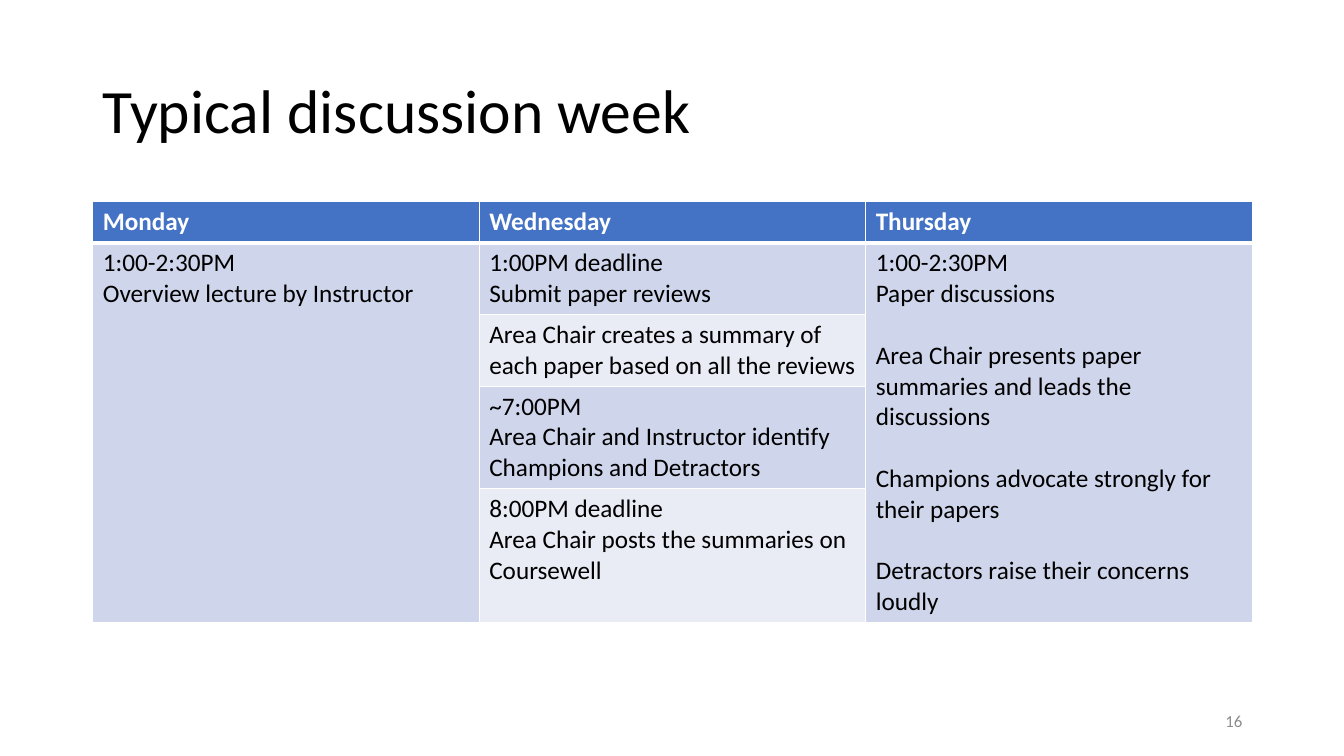
from pptx import Presentation
from pptx.dml.color import RGBColor
from pptx.enum.text import MSO_ANCHOR as Anchor, PP_ALIGN as Align
from pptx.oxml import parse_xml
from pptx.oxml.ns import nsdecls
from pptx.util import Inches, Pt

HEADINGS = ["Monday", "Wednesday", "Thursday"]
MONDAY = ["1:00-2:30PM", "Overview lecture by Instructor"]
WEDNESDAY = [
    ["1:00PM deadline", "Submit paper reviews"],
    ["Area Chair creates a summary of each paper based on all the reviews"],
    ["~7:00PM", "Area Chair and Instructor identify Champions and Detractors"],
    ["8:00PM deadline", "Area Chair posts the summaries on Coursewell"],
]
THURSDAY = [
    "1:00-2:30PM",
    "Paper discussions",
    "Area Chair presents paper summaries and leads the discussions",
    "Champions advocate strongly for their papers",
    "Detractors raise their concerns loudly",
]
ROW_HEIGHTS = [0.41, 0.71, 0.71, 1.01, 1.32]


def color(value):
    return RGBColor.from_string(value)


class WeekSlide:
    font = "Calibri"
    black, white, gray = "000000", "FFFFFF", "8C8C8C"
    header = "4472C4"
    bands = ["CFD5EA", "E9EBF5"]
    left, width = 0.92, 11.5

    def __init__(self, deck):
        self.slide = deck.slides.add_slide(deck.slide_layouts[5])

    def style_text(self, frame, size, ink, bold=False, align=Align.LEFT):
        for paragraph in frame.paragraphs:
            paragraph.alignment = align
            for run in paragraph.runs:
                run.font.name = self.font
                run.font.size = Pt(size)
                run.font.bold = bold
                run.font.color.rgb = color(ink)

    def title(self, text):
        heading = self.slide.shapes.title
        heading.left, heading.top = Inches(self.left), Inches(0.4)
        heading.width, heading.height = Inches(self.width), Inches(1.45)
        frame = heading.text_frame
        frame.text = text
        frame.vertical_anchor = Anchor.MIDDLE
        frame.paragraphs[0].line_spacing = 0.9
        self.style_text(frame, 44, self.black)

    def page_number(self, text):
        box = self.slide.shapes.add_textbox(
            Inches(9.42), Inches(6.95), Inches(3), Inches(0.4))
        frame = box.text_frame
        frame.word_wrap = True
        frame.vertical_anchor = Anchor.MIDDLE
        frame.text = text
        self.style_text(frame, 12, self.gray, align=Align.RIGHT)

    def table(self, top, columns, heights):
        schedule = self.slide.shapes.add_table(
            len(heights), columns, Inches(self.left), Inches(top),
            Inches(self.width), Inches(sum(heights))).table
        for row, height in zip(schedule.rows, heights):
            row.height = Inches(height)
        for index, row in enumerate(schedule.rows):
            for cell in row.cells:
                self.borders(cell, top=3 if index == 1 else 1,
                             bottom=3 if index == 0 else 1)
                cell.fill.solid()
                fill = self.bands[(index - 1) % 2] if index else self.header
                cell.fill.fore_color.rgb = color(fill)
        return schedule

    def borders(self, cell, top, bottom):
        properties = cell._tc.get_or_add_tcPr()
        for side, points in zip("LRTB", (1, 1, top, bottom)):
            properties.append(parse_xml(
                f'<a:ln{side} {nsdecls("a")} w="{Pt(points)}"><a:solidFill>'
                f'<a:srgbClr val="{self.white}"/></a:solidFill></a:ln{side}>'))

    def cell_text(self, cell, lines, ink=black, bold=False, spaced_from=None):
        frame = cell.text_frame
        frame.text = "\n".join(lines)
        self.style_text(frame, 18, ink, bold)
        if spaced_from is not None:
            for paragraph in frame.paragraphs[spaced_from:]:
                paragraph.space_before = Pt(22)


def main():
    deck = Presentation()
    deck.slide_width, deck.slide_height = Inches(13.33), Inches(7.5)
    week = WeekSlide(deck)
    week.title("Typical discussion week")

    # Schedule: one column per day
    schedule = week.table(2, len(HEADINGS), ROW_HEIGHTS)
    for column, day in enumerate(HEADINGS):
        week.cell_text(schedule.cell(0, column), [day], week.white, bold=True)

    # Monday and Thursday each fill the whole column
    last_row = len(WEDNESDAY)
    for column in (0, 2):
        schedule.cell(1, column).merge(schedule.cell(last_row, column))
    week.cell_text(schedule.cell(1, 0), MONDAY)
    week.cell_text(schedule.cell(1, 2), THURSDAY, spaced_from=2)

    # Wednesday has one row per step
    for row, step in enumerate(WEDNESDAY, start=1):
        week.cell_text(schedule.cell(row, 1), step)

    week.page_number("16")
    deck.save("out.pptx")


if __name__ == "__main__":
    main()
